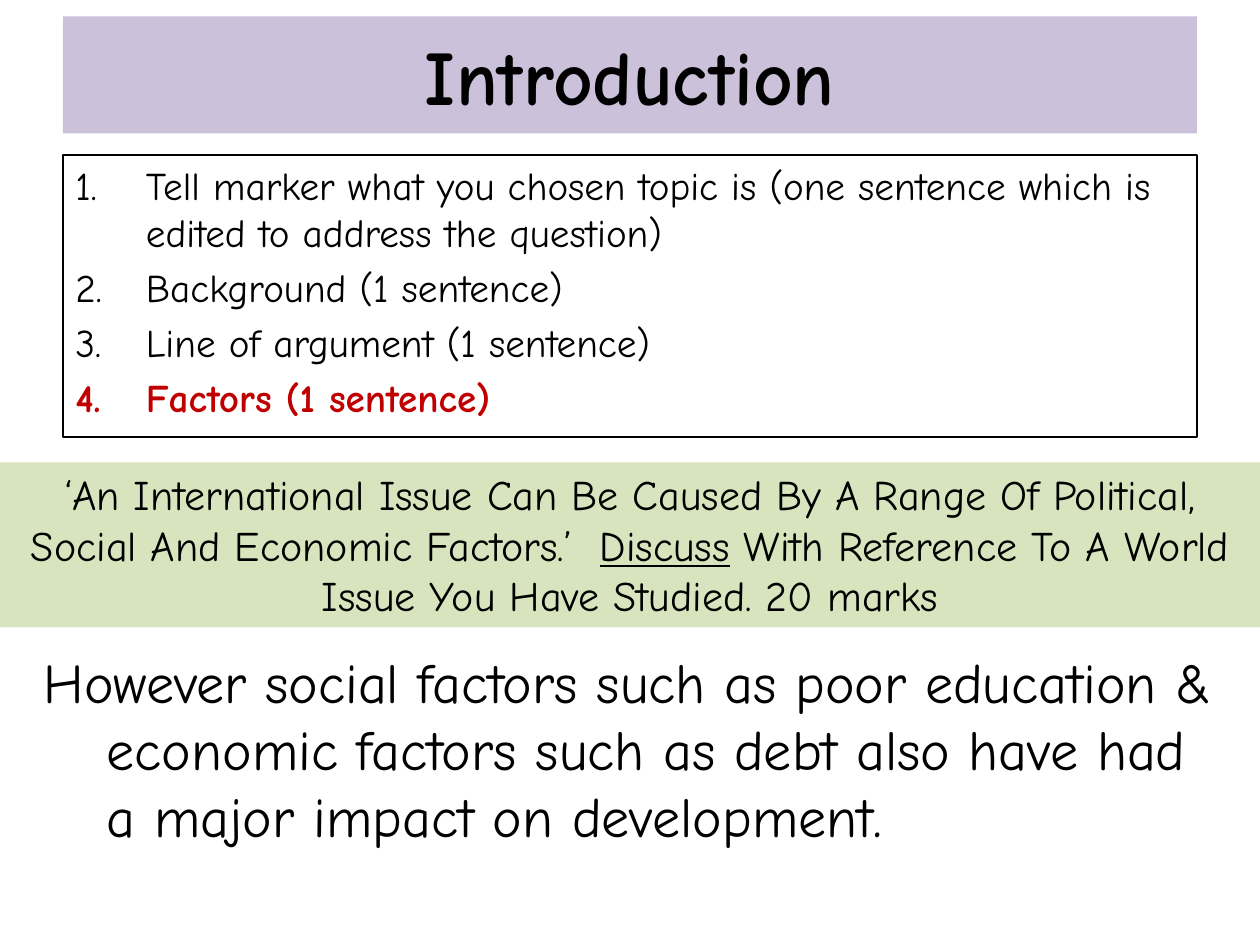
from lxml import etree
from pptx import Presentation
from pptx.dml.color import RGBColor
from pptx.enum.shapes import MSO_SHAPE
from pptx.enum.text import MSO_ANCHOR, PP_ALIGN
from pptx.oxml.ns import qn
from pptx.util import Inches, Pt

RECT = MSO_SHAPE.RECTANGLE
TOP, MIDDLE = MSO_ANCHOR.TOP, MSO_ANCHOR.MIDDLE
LEFT, CENTER = PP_ALIGN.LEFT, PP_ALIGN.CENTER
FONT = "Comic Neue"
COLORS = {"text": "000000", "accent": "C00000", "paper": "FFFFFF",
          "title": "CCC1DA", "question": "D7E4BD"}

prs = Presentation()
prs.slide_width, prs.slide_height = Inches(10), Inches(7.5)
s = prs.slides.add_slide(prs.slide_layouts[6])


def add_box(x, y, w, h, fill=None, anchor=TOP):
    sp = s.shapes.add_shape(RECT, Inches(x), Inches(y), Inches(w), Inches(h))
    sp.shadow.inherit = False
    if fill:
        sp.fill.solid()
        sp.fill.fore_color.rgb = RGBColor.from_string(COLORS[fill])
    else:
        sp.fill.background()
    sp.line.fill.background()
    tf = sp.text_frame
    tf.word_wrap = True
    tf.vertical_anchor = anchor
    return sp


def add_run(p, text, size, align=LEFT, color="text", bold=False, underline=False, indent=0):
    p.alignment = align
    if indent:
        pPr = p._p.get_or_add_pPr()
        pPr.set("marL", str(Inches(indent)))
        pPr.set("indent", str(-Inches(indent)))
    r = p.add_run()
    r.text = text
    r.font.name, r.font.size = FONT, Pt(size)
    r.font.bold, r.font.underline = bold, underline
    r.font.color.rgb = RGBColor.from_string(COLORS[color])


# Numbered steps
sp = add_box(0.5, 1.23, 9, 2.24)
sp.line.color.rgb = RGBColor.from_string(COLORS["text"])
sp.line.width = Pt(0.75)
tf = sp.text_frame
steps = [
    ("Tell marker what you chosen topic is (one sentence which is edited to address the question)", False),
    ("Background (1 sentence)", False),
    ("Line of argument (1 sentence)", False),
    ("Factors (1 sentence)", True),
]
for i, (text, current) in enumerate(steps):
    p = tf.add_paragraph() if i else tf.paragraphs[0]
    p.space_before = Pt(4.5)
    add_run(p, text, 22.4, color="accent" if current else "text", bold=current, indent=0.56)
    pPr = p._p.get_or_add_pPr()
    etree.SubElement(pPr, qn("a:buFont"), typeface=FONT)
    etree.SubElement(pPr, qn("a:buAutoNum"), type="arabicPeriod")

# Example sentence
sp = add_box(0.25, 5.09, 9.51, 2.26, "paper")
add_run(sp.text_frame.paragraphs[0],
        "However social factors such as poor education & economic factors "
        "such as debt also have had a major impact on development.", 32, indent=0.5)

# Title
sp = add_box(0.5, 0.13, 9, 0.93, "title", MIDDLE)
add_run(sp.text_frame.paragraphs[0], "Introduction", 44, CENTER, bold=True)

# Essay question
sp = add_box(0, 3.67, 10, 1.31, "question")
p = sp.text_frame.paragraphs[0]
for text, underline in [
    ("‘An International Issue Can Be Caused By A Range Of Political, "
     "Social And Economic Factors.’  ", False),
    ("Discuss", True),
    (" With Reference To A World Issue You Have Studied. 20 marks", False),
]:
    add_run(p, text, 24, CENTER, underline=underline)

prs.save("out.pptx")
